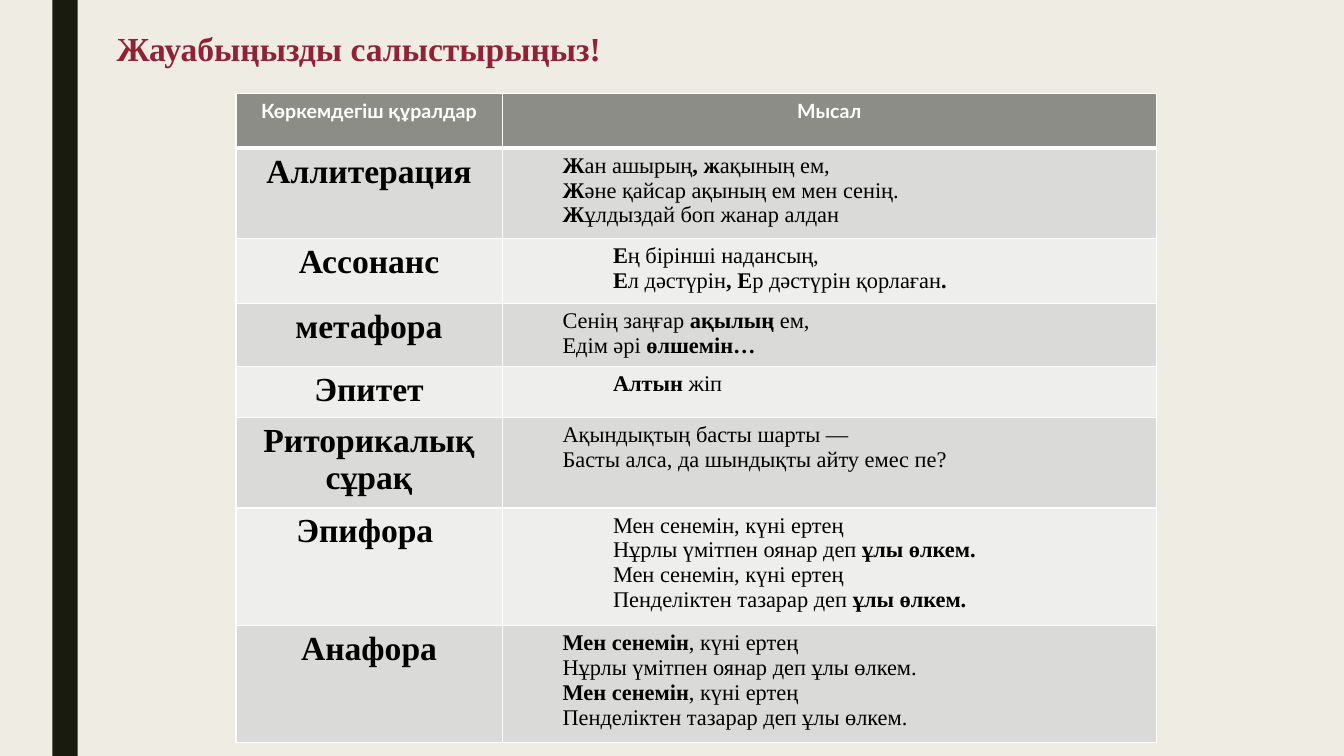
from lxml.etree import SubElement
from pptx import Presentation
from pptx.dml.color import RGBColor
from pptx.enum.shapes import MSO_SHAPE as Shape
from pptx.enum.text import MSO_AUTO_SIZE as AutoSize, PP_ALIGN as Align
from pptx.oxml.ns import qn
from pptx.util import Inches, Pt

TITLE = "Жауабыңызды салыстырыңыз!"
HEADINGS = ["Көркемдегіш құралдар", "Мысал"]
DEVICES = [
    ("Аллитерация", 0.9, [
        "*Ж*ан ашырың*, ж*ақының ем,",
        "*Ж*әне қайсар ақының ем мен сенің.",
        "*Ж*ұлдыздай боп жанар алдан"]),
    ("Ассонанс", 0.64, [
        "*Е*ң бірінші надансың,",
        "*Е*л дәстүрін*, Е*р дәстүрін қорлаған*.*"]),
    ("метафора", 0.63, [
        "Сенің заңғар *ақылың* ем,",
        "Едім әрі *өлшемін…*"]),
    ("Эпитет", 0.5, ["*Алтын *жіп"]),
    ("Риторикалық сұрақ", 0.9, [
        "Ақындықтың басты шарты —",
        "Басты алса, да шындықты айту емес пе?"]),
    ("Эпифора ", 1.17, [
        "Мен сенемін, күні ертең",
        "Нұрлы үмітпен оянар деп *ұлы өлкем.*",
        "Мен сенемін, күні ертең",
        "Пенделіктен тазарар деп *ұлы өлкем.*"]),
    ("Анафора", 1.16, [
        "*Мен сенемін*, күні ертең",
        "Нұрлы үмітпен оянар деп ұлы өлкем.",
        "*Мен сенемін*, күні ертең",
        "Пенделіктен тазарар деп ұлы өлкем."]),
]
COLUMNS = [2.64, 6.49]
HEADER_HEIGHT = 0.54
BANDS = ["DADBD9", "EEEEED"]
SERIF = "Times New Roman"


def color(value):
    return RGBColor.from_string(value)


def paint(target, value):
    target.fill.solid()
    target.fill.fore_color.rgb = color(value)


def style(para, size, name, value, bold=None, align=Align.CENTER):
    para.alignment = align
    para.font.size, para.font.name = Pt(size), name
    para.font.bold, para.font.color.rgb = bold, color(value)


def add_borders(cell, top=1, bottom=1):
    properties = cell._tc.get_or_add_tcPr()
    widths = {"lnL": 1, "lnR": 1, "lnT": top, "lnB": bottom}
    for index, (side, width) in enumerate(widths.items()):
        line = SubElement(properties, qn("a:" + side), w=str(Pt(width)))
        fill = SubElement(line, qn("a:solidFill"))
        SubElement(fill, qn("a:srgbClr"), val="FFFFFF")
        properties.insert(index, line)


def write_examples(cell, lines, indent):
    frame = cell.text_frame
    for number, line in enumerate(lines):
        para = frame.add_paragraph() if number else frame.paragraphs[0]
        properties = para._p.get_or_add_pPr()
        properties.set("marL", str(Inches(indent)))
        properties.set("indent", "0")
        style(para, 16, SERIF, "000000", align=Align.JUSTIFY)
        for part, words in enumerate(line.split("*")):
            if words:
                span = para.add_run()
                span.text = words
                span.font.bold = part % 2 == 1


deck = Presentation()
deck.slide_width, deck.slide_height = Inches(13.33), Inches(7.5)
page = deck.slides.add_slide(deck.slide_layouts[6])
paint(page.background, "EFEDE3")

stripe = page.shapes.add_shape(Shape.RECTANGLE, Inches(0.52), 0, Inches(0.25), deck.slide_height)
stripe.shadow.inherit = False
paint(stripe, "191B0E")
stripe.line.fill.background()

heights = [HEADER_HEIGHT] + [height for _, height, _ in DEVICES]
frame = page.shapes.add_table(len(heights), len(COLUMNS), Inches(2.34), Inches(0.93),
                              Inches(sum(COLUMNS)), Inches(sum(heights)))
table = frame.table
for column, width in zip(table.columns, COLUMNS):
    column.width = Inches(width)
for row, height in zip(table.rows, heights):
    row.height = Inches(height)

for cell, heading in zip(table.rows[0].cells, HEADINGS):
    cell.text = heading
    style(cell.text_frame.paragraphs[0], 14, "Lato", "FFFFFF", True)
    paint(cell, "8C8D86")
    add_borders(cell, bottom=3)

for number, (device, _, lines) in enumerate(DEVICES):
    name_cell, example_cell = table.rows[number + 1].cells
    name_cell.text = device
    style(name_cell.text_frame.paragraphs[0], 24, SERIF, "000000", True)
    write_examples(example_cell, lines, 0.5 * (1 + number % 2))
    for cell in (name_cell, example_cell):
        paint(cell, BANDS[number % 2])
        add_borders(cell, top=1 if number else 3)

box = page.shapes.add_textbox(Inches(1.06), Inches(0.19), Inches(9.16), Inches(0.51))
box.text_frame.word_wrap = True
box.text_frame.auto_size = AutoSize.SHAPE_TO_FIT_TEXT
para = box.text_frame.paragraphs[0]
para.text = TITLE
para.line_spacing, para.space_after = 1.09, Pt(10)
style(para, 24, SERIF, "912236", True, Align.JUSTIFY)

deck.save("out.pptx")
